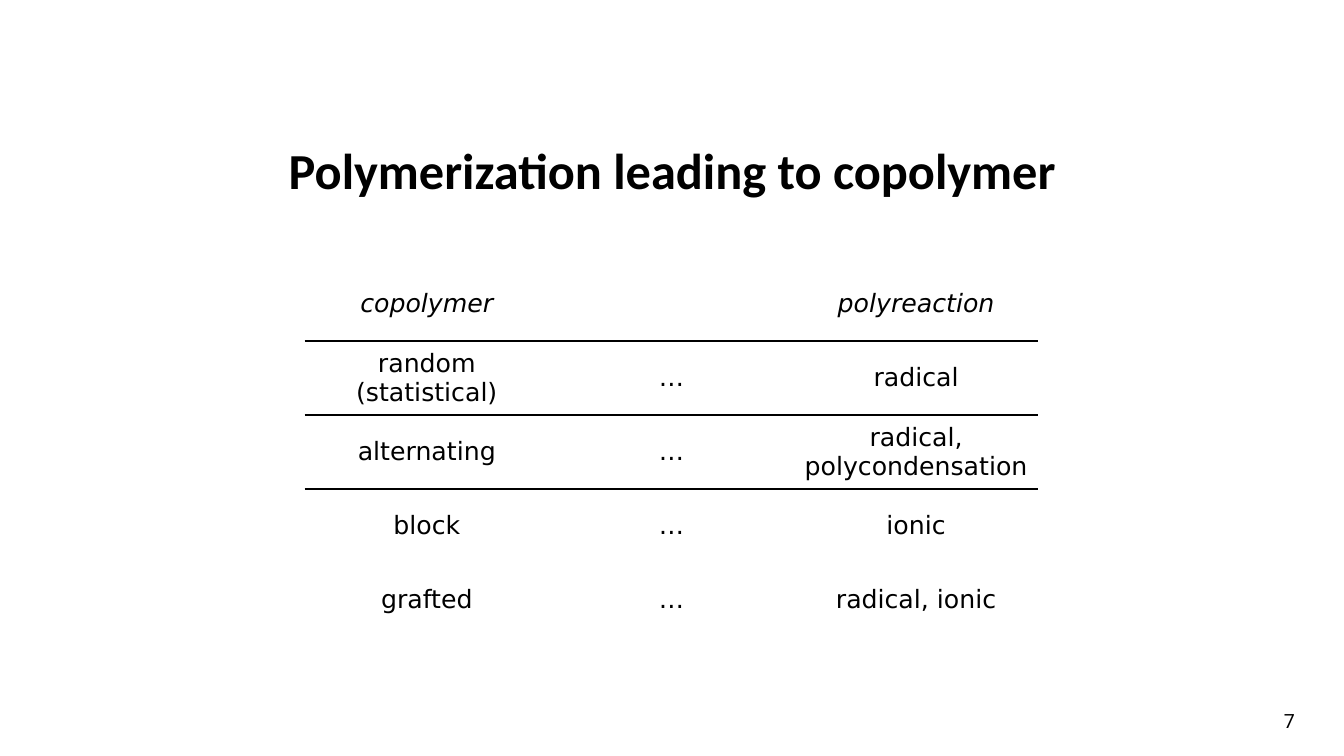
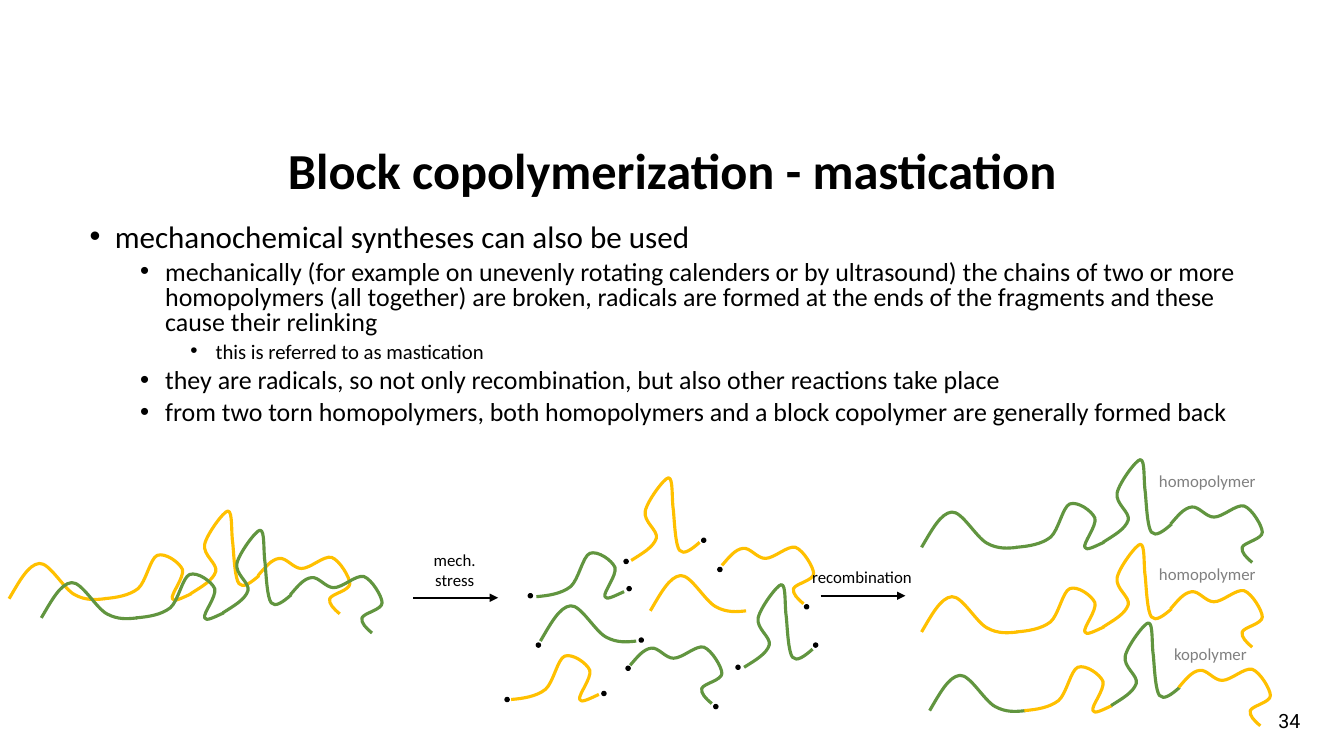
from dataclasses import dataclass
from itertools import product
from typing import Any, NamedTuple

from lxml import etree
from pptx import Presentation
from pptx.dml.color import RGBColor
from pptx.enum.shapes import MSO_CONNECTOR, MSO_SHAPE
from pptx.enum.text import MSO_ANCHOR, MSO_AUTO_SIZE, PP_ALIGN
from pptx.oxml.ns import qn
from pptx.util import Inches, Pt

CENTER, LEFT = PP_ALIGN.CENTER, PP_ALIGN.LEFT
MIDDLE, TOP = MSO_ANCHOR.MIDDLE, MSO_ANCHOR.TOP
GROW, FIXED = MSO_AUTO_SIZE.SHAPE_TO_FIT_TEXT, MSO_AUTO_SIZE.NONE
OVAL, STRAIGHT = MSO_SHAPE.OVAL, MSO_CONNECTOR.STRAIGHT
NO_GRID = "{2D5ABB26-0587-4C30-8999-92F81FD0307C}"


@dataclass(frozen=True)
class Theme:
    black: str = "000000"
    gray: str = "808080"
    gold: str = "FFC000"
    green: str = "61953F"
    body: str = "Calibri"
    grid: str = "DejaVu Sans"
    page: str = "Roboto"
    title: float = 36
    cell: float = 18
    number: float = 14
    label: float = 12
    levels: tuple[float, ...] = (22.2, 18.5, 14.8)
    chain: float = 2.25
    arrow: float = 1.5
    rule: float = 1


THEME = Theme()


class Box(NamedTuple):
    x: float
    y: float
    w: float
    h: float


class Point(NamedTuple):
    x: float
    y: float


class Label(NamedTuple):
    text: str
    box: Box
    color: str


class Piece(NamedTuple):
    kind: str
    x: float
    y: float
    color: str


class Chain(NamedTuple):
    x: float
    y: float
    colors: tuple[str, ...]


class Item(NamedTuple):
    level: int
    text: str


# Chain pieces: cubic control points relative to the start of each piece
CURVES: dict[str, list[Point]] = {
    kind: [Point(*pair) for pair in pairs]
    for kind, pairs in {
        "wave": [(0, 0), (.1, -.17), (.19, -.34), (.3, -.35), (.4, -.36), (.54, -.1),
                 (.65, -.04), (.76, .02), (.86, .01), (.95, 0)],
        "hook": [(0, 0), (.12, -.01), (.25, -.03), (.34, -.1), (.42, -.17), (.46, -.4),
                 (.53, -.43), (.61, -.46), (.75, -.36), (.78, -.29), (.8, -.21),
                 (.66, -.04), (.68, 0), (.69, .04), (.78, -.01), (.87, -.05)],
        "peak": [(0, 0), (.11, -.07), (.22, -.13), (.25, -.22), (.27, -.3), (.12, -.38),
                 (.14, -.49), (.16, -.59), (.33, -.82), (.37, -.82), (.42, -.82),
                 (.4, -.61), (.42, -.49), (.43, -.37), (.44, -.15), (.48, -.1),
                 (.52, -.05), (.6, -.11), (.68, -.18)],
        "tail": [(0, 0), (.07, -.08), (.13, -.16), (.21, -.17), (.28, -.18), (.35, -.07),
                 (.43, -.07), (.52, -.07), (.65, -.2), (.73, -.18), (.81, -.15),
                 (.91, .02), (.91, .08), (.91, .15), (.73, .18), (.71, .23),
                 (.7, .28), (.75, .33), (.81, .38)],
    }.items()
}
JOINTS = {"wave": Point(0, 0), "hook": Point(.94, 0),
          "peak": Point(1.8, -.05), "tail": Point(2.47, -.23)}


# Formatting helpers
def apply(target: Any, values: dict[str, Any]) -> None:
    for name, value in values.items():
        setattr(target, name, value)


def rgb(color: str) -> RGBColor:
    return RGBColor.from_string(color)


def add_tag(parent: Any, tag: str, **attrs: str) -> Any:
    return etree.SubElement(parent, qn(tag), attrs)


def write(para: Any, text: str, size: float, face: str, color: str = THEME.black,
          align: Any = CENTER, bold: bool = False, italic: bool = False) -> None:
    para.text = text
    para.alignment = align
    for run in para.runs:
        apply(run.font, {"size": Pt(size), "name": face, "bold": bold, "italic": italic})
        run.font.color.rgb = rgb(color)


def add_text(slide: Any, box: Box, wrap: bool = True, anchor: Any = MIDDLE) -> Any:
    frame = slide.shapes.add_textbox(*map(Inches, box)).text_frame
    apply(frame, {"word_wrap": wrap, "vertical_anchor": anchor,
                  "auto_size": FIXED if wrap else GROW})
    return frame


def set_line(shape: Any, color: str, width: float) -> None:
    shape.line.color.rgb = rgb(color)
    shape.line.width = Pt(width)


# Parts shared by both slides
def add_slide(deck: Any, title: str, number: str) -> Any:
    slide = deck.slides.add_slide(deck.slide_layouts[6])
    head = add_text(slide, Box(.92, .99, 11.5, 1.45)).paragraphs[0]
    write(head, title, THEME.title, THEME.body, bold=True)
    head.line_spacing = .9
    foot = add_text(slide, Box(12.51, 6.95, .56, .4)).paragraphs[0]
    write(foot, number, THEME.number, THEME.page)
    return slide


# Table
def add_rule(cell: Any, tag: str) -> None:
    line = add_tag(cell._tc.get_or_add_tcPr(), tag, w=str(Pt(THEME.rule)))
    add_tag(add_tag(line, "a:solidFill"), "a:srgbClr", val=THEME.black)


def add_grid(slide: Any, rows: list[tuple[str, ...]], box: Box, ruled: int) -> None:
    table = slide.shapes.add_table(len(rows), len(rows[0]), *map(Inches, box)).table
    apply(table, {"first_row": False, "horz_banding": False})
    table._tbl.tblPr.find(qn("a:tableStyleId")).text = NO_GRID
    for r, c in product(range(len(rows)), range(len(rows[0]))):
        cell = table.cell(r, c)
        write(cell.text_frame.paragraphs[0], rows[r][c], THEME.cell, THEME.grid,
              italic=r == 0)
        cell.vertical_anchor = MIDDLE
        if 0 < r <= ruled:
            add_rule(cell, "a:lnT")
        if r < ruled:
            add_rule(cell, "a:lnB")
        cell.fill.background()


# Bulleted text
def add_list(slide: Any, items: list[Item], box: Box) -> None:
    frame = add_text(slide, box, anchor=TOP)
    for i, item in enumerate(items):
        para = frame.add_paragraph() if i else frame.paragraphs[0]
        props = para._p.get_or_add_pPr()
        props.set("marL", str(Inches(.25 + .5 * item.level)))
        props.set("indent", str(Inches(-.25)))
        add_tag(props, "a:buFont", typeface="Arial")
        add_tag(props, "a:buChar", char="•")
        apply(para, {"level": item.level, "line_spacing": .8,
                     "space_before": Pt(5 if i else 0)})
        write(para, item.text, THEME.levels[item.level], THEME.body, align=LEFT)


# Drawing
def bend(shape: Any) -> None:
    """Turn each three straight segments into one cubic curve."""
    track = next(shape._element.iter(qn("a:path")))
    lines = track.findall(qn("a:lnTo"))
    for i in range(0, len(lines), 3):
        curve = add_tag(track, "a:cubicBezTo")
        for line in lines[i:i + 3]:
            curve.append(line[0])
            track.remove(line)


def add_piece(slide: Any, piece: Piece) -> None:
    points = [(Inches(piece.x + p.x), Inches(piece.y + p.y))
              for p in CURVES[piece.kind]]
    pen = slide.shapes.build_freeform(*points[0])
    pen.add_line_segments(points[1:], close=False)
    shape = pen.convert_to_shape()
    bend(shape)
    shape.shadow.inherit = False
    shape.fill.background()
    set_line(shape, piece.color, THEME.chain)


def add_chain(slide: Any, chain: Chain) -> None:
    for (kind, joint), color in zip(JOINTS.items(), chain.colors):
        add_piece(slide, Piece(kind, chain.x + joint.x, chain.y + joint.y, color))


def add_arrow(slide: Any, start: Point, length: float) -> None:
    ends = (start.x, start.y, start.x + length, start.y)
    arrow = slide.shapes.add_connector(STRAIGHT, *map(Inches, ends))
    set_line(arrow, THEME.black, THEME.arrow)
    add_tag(arrow.line._get_or_add_ln(), "a:tailEnd", type="triangle")
    add_tag(arrow._element.spPr, "a:effectLst")


def add_dot(slide: Any, at: Point) -> None:
    dot = slide.shapes.add_shape(OVAL, *map(Inches, (at.x, at.y, .04, .04)))
    dot.shadow.inherit = False
    dot.fill.solid()
    dot.fill.fore_color.rgb = rgb(THEME.black)
    set_line(dot, THEME.black, THEME.rule)


def add_label(slide: Any, label: Label) -> None:
    para = add_text(slide, label.box, wrap=False, anchor=TOP).paragraphs[0]
    write(para, label.text, THEME.label, THEME.body, label.color)


# Content
ROWS = [
    ("copolymer", "", "polyreaction"),
    ("random (statistical)", "…", "radical"),
    ("alternating", "…", "radical,\npolycondensation"),
    ("block", "…", "ionic"),
    ("grafted", "…", "radical, ionic"),
]
ITEMS = [
    Item(0, "mechanochemical syntheses can also be used"),
    Item(1, "mechanically (for example on unevenly rotating calenders or by ultrasound) "
            "the chains of two or more homopolymers (all together) are broken, radicals "
            "are formed at the ends of the fragments and these cause their relinking"),
    Item(2, "this is referred to as mastication"),
    Item(1, "they are radicals, so not only recombination, but also other reactions "
            "take place"),
    Item(1, "from two torn homopolymers, both homopolymers and a block copolymer are "
            "generally formed back"),
]
GOLD, GREEN = THEME.gold, THEME.green
CHAINS = [
    Chain(.09, 5.94, (GOLD,) * 4), Chain(.41, 6.13, (GREEN,) * 4),
    Chain(9.14, 5.43, (GREEN,) * 4), Chain(9.14, 6.27, (GOLD,) * 4),
    Chain(9.22, 7.05, (GREEN, GOLD) * 2),
]
PIECES = [
    Piece("wave", 6.45, 6.06, GOLD), Piece("hook", 5.07, 6.94, GOLD),
    Piece("peak", 6.26, 5.56, GOLD), Piece("tail", 7.16, 5.61, GOLD),
    Piece("wave", 5.36, 6.36, GREEN), Piece("hook", 5.32, 5.92, GREEN),
    Piece("peak", 7.38, 6.62, GREEN), Piece("tail", 6.25, 6.6, GREEN),
]
DOTS = [Point(*at) for at in (
    (5.24, 5.89), (6.22, 5.82), (6.19, 5.55), (6.96, 5.34), (7.12, 5.63),
    (7.98, 6), (5.32, 6.38), (5.01, 6.92), (5.97, 6.86), (6.34, 6.33),
    (6.21, 6.61), (7.08, 6.99), (7.3, 6.6), (8.07, 6.38))]
LABELS = [
    Label("mech.\nstress", Box(4.2, 5.4, .62, .5), THEME.black),
    Label("recombination", Box(7.95, 5.57, 1.2, .3), THEME.black),
    Label("homopolymer", Box(11.39, 4.62, 1.17, .3), THEME.gray),
    Label("homopolymer", Box(11.39, 5.54, 1.17, .3), THEME.gray),
    Label("kopolymer", Box(11.54, 6.34, .93, .3), THEME.gray),
]
ARROWS = [Point(4.1, 5.93), Point(8.14, 5.91)]


def main() -> None:
    deck = Presentation()
    apply(deck, {"slide_width": Inches(13.33), "slide_height": Inches(7.5)})

    slide = add_slide(deck, "Polymerization leading to copolymer", "7")
    add_grid(slide, ROWS, Box(3.02, 2.65, 7.28, 3.67), ruled=2)

    slide = add_slide(deck, "Block copolymerization - mastication", "34")
    add_list(slide, ITEMS, Box(.79, 2.18, 11.68, 2.52))
    for chain in CHAINS:
        add_chain(slide, chain)
    for piece in PIECES:
        add_piece(slide, piece)
    for start in ARROWS:
        add_arrow(slide, start, .84)
    for dot in DOTS:
        add_dot(slide, dot)
    for label in LABELS:
        add_label(slide, label)

    deck.save("out.pptx")


if __name__ == "__main__":
    main()
